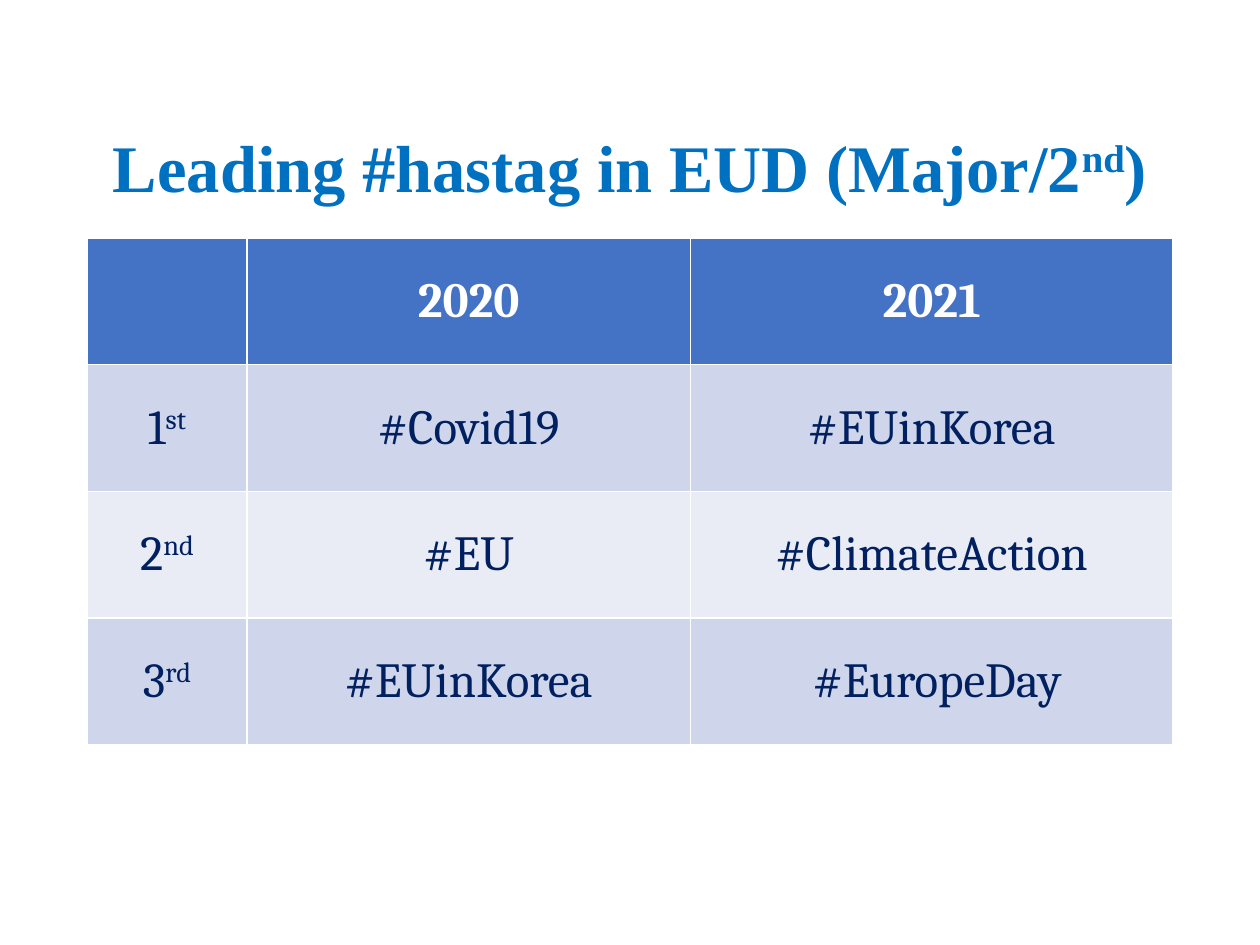
"""Build a slide with a table of the leading hashtags by year."""
from pptx import Presentation
from pptx.dml.color import RGBColor
from pptx.enum import text
from pptx.util import Inches, Pt

TITLE = ("Leading #hastag in EUD (Major/2", "nd", ")")
ROWS = [
    [("",), ("2020",), ("2021",)],
    [("1", "st"), ("#Covid19",), ("#EUinKorea",)],
    [("2", "nd"), ("#EU",), ("#ClimateAction",)],
    [("3", "rd"), ("#EUinKorea",), (" #EuropeDay",)],
]
COL_WIDTHS = [1.27, 3.52, 3.83]
LEFT, WIDTH = 0.69, 8.62
TABLE_TOP, TABLE_HEIGHT = 1.89, 4.02
HEADER_FILL, BAND_FILLS = "4472C4", ("CFD5EA", "E9EBF5")


def color(value):
    return RGBColor.from_string(value)


def write(tf, parts, size=28, font="Cambria", fill="002060", bold=False, spacing=1.0):
    """Write centred text in which every second part is a superscript."""
    p = tf.paragraphs[0]
    p.alignment = text.PP_ALIGN.CENTER
    p.line_spacing = spacing
    p.font.size = Pt(size)
    for i, part in enumerate(parts):
        if not part:
            continue
        r = p.add_run()
        r.text = part
        r.font.name, r.font.size, r.font.bold = font, Pt(size), bold
        r.font.color.rgb = color(fill)
        if i % 2:
            r.font._element.set("baseline", "30000")


def add_title(s):
    sp = s.shapes.title
    sp.left, sp.top = Inches(LEFT), Inches(0.96)
    sp.width, sp.height = Inches(WIDTH), Inches(0.79)
    tf = sp.text_frame
    tf.word_wrap = True
    tf.auto_size = text.MSO_AUTO_SIZE.NONE
    tf.vertical_anchor = text.MSO_ANCHOR.MIDDLE
    write(tf, TITLE, size=38, font="Times New Roman", fill="0070C0",
          bold=True, spacing=0.9)


def add_hashtag_table(s):
    table = s.shapes.add_table(
        len(ROWS), len(COL_WIDTHS), Inches(LEFT), Inches(TABLE_TOP),
        Inches(WIDTH), Inches(TABLE_HEIGHT)).table
    for column, width in zip(table.columns, COL_WIDTHS):
        column.width = Inches(width)
    for i, row in enumerate(ROWS):
        header = i == 0
        for j, parts in enumerate(row):
            cell = table.cell(i, j)
            cell.vertical_anchor = text.MSO_ANCHOR.MIDDLE
            cell.fill.solid()
            cell.fill.fore_color.rgb = color(
                HEADER_FILL if header else BAND_FILLS[(i - 1) % 2])
            write(cell.text_frame, parts, bold=header,
                  fill="FFFFFF" if header else "002060")


def main():
    prs = Presentation()
    prs.slide_width, prs.slide_height = Inches(10), Inches(7.5)
    s = prs.slides.add_slide(prs.slide_layouts[5])
    add_title(s)
    add_hashtag_table(s)
    prs.save("out.pptx")


if __name__ == "__main__":
    main()
